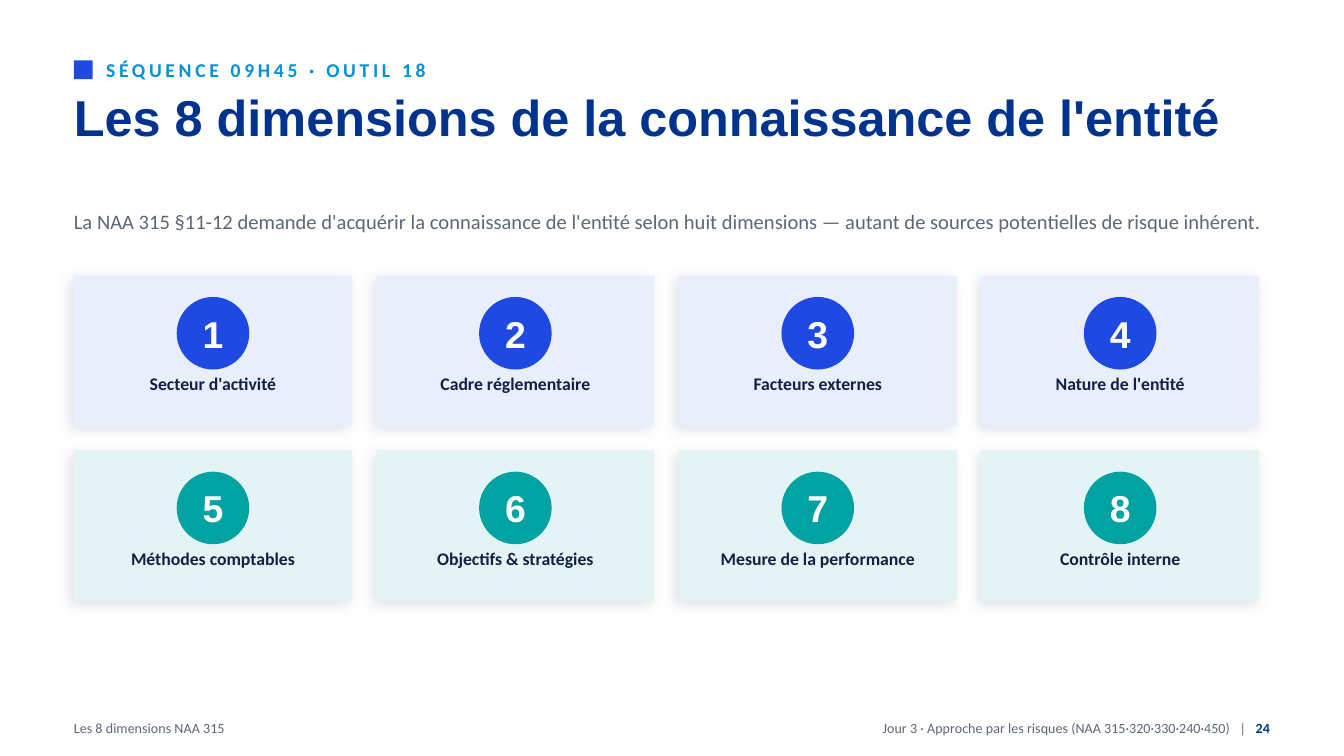
import pptx
import pptx.util
import pptx.dml.color
import pptx.enum.shapes
import pptx.enum.text
import pptx.oxml
import pptx.oxml.ns

Inches = pptx.util.Inches
Pt = pptx.util.Pt
Shape = pptx.enum.shapes.MSO_SHAPE
Align = pptx.enum.text.PP_ALIGN
Anchor = pptx.enum.text.MSO_ANCHOR

TITLE = "Les 8 dimensions de la connaissance de l'entité"
KICKER = "SÉQUENCE 09H45 · OUTIL 18"
INTRO = (
    "La NAA 315 §11-12 demande d'acquérir la connaissance de l'entité selon huit "
    "dimensions — autant de sources potentielles de risque inhérent."
)
ROWS = [
    ("E8EFFB", "1E49E2", ["Secteur d'activité", "Cadre réglementaire",
                          "Facteurs externes", "Nature de l'entité"]),
    ("E4F4F4", "00A3A1", ["Méthodes comptables", "Objectifs & stratégies",
                          "Mesure de la performance", "Contrôle interne"]),
]
FOOTER_LEFT = "Les 8 dimensions NAA 315"
FOOTER_RIGHT = "Jour 3 · Approche par les risques (NAA 315·320·330·240·450)"
PAGE_NUMBER = "24"

NAVY, GREY, BLUE = "00338D", "5C6678", "1E49E2"
PAGE_WIDTH = 10
PAGE_HEIGHT = PAGE_WIDTH * 9 / 16
LEFT, TOP = 0.55, 2.05
CARD_WIDTH, CARD_HEIGHT, GAP = 2.07, 1.12, 0.18
CIRCLE, PADDING = 0.54, 0.08
FOOTER_TOP, FOOTER_HEIGHT = 5.3, 0.24


def color(value):
    return pptx.dml.color.RGBColor.from_string(value)


def style(span, size, hue, bold=False, font="Calibri", spacing=0):
    span.font.size = Pt(size)
    span.font.name = font
    span.font.bold = bold
    span.font.color.rgb = color(hue)
    if spacing:
        span.font._element.set("spc", str(round(spacing * 100)))


def write(box, spans, align=Align.LEFT, anchor=Anchor.MIDDLE, line_spacing=None):
    frame = box.text_frame
    frame.word_wrap = True
    frame.auto_size = pptx.enum.text.MSO_AUTO_SIZE.NONE
    frame.vertical_anchor = anchor
    frame.margin_left = frame.margin_right = 0
    frame.margin_top = frame.margin_bottom = 0
    para = frame.paragraphs[0]
    para.alignment = align
    if line_spacing:
        para.line_spacing = line_spacing
    for text, look in spans:
        span = para.add_run()
        span.text = text
        style(span, **look)


def add_text(page, place, spans, **layout):
    box = page.shapes.add_textbox(*map(Inches, place))
    write(box, spans, **layout)


def add_shape(page, kind, place, fill):
    shape = page.shapes.add_shape(kind, *map(Inches, place))
    shape.shadow.inherit = False
    shape.fill.solid()
    shape.fill.fore_color.rgb = color(fill)
    shape.line.fill.background()
    return shape


def add_shadow(shape):
    effects = shape._element.spPr.find(pptx.oxml.ns.qn("a:effectLst"))
    effects.append(pptx.oxml.parse_xml(
        f'<a:outerShdw {pptx.oxml.ns.nsdecls("a")} blurRad="{Pt(7)}" dist="{Pt(3)}" '
        f'dir="{135 * 60000}" algn="bl" rotWithShape="0">'
        '<a:srgbClr val="5B6B8C"><a:alpha val="18000"/></a:srgbClr></a:outerShdw>'
    ))


def add_card(page, left, top, number, label, fill, accent):
    card = add_shape(page, Shape.RECTANGLE, (left, top, CARD_WIDTH, CARD_HEIGHT), fill)
    add_shadow(card)
    circle_place = (left + (CARD_WIDTH - CIRCLE) / 2, top + 0.16, CIRCLE, CIRCLE)
    add_shape(page, Shape.OVAL, circle_place, accent)
    add_text(page, circle_place,
             [(str(number), dict(size=20, hue="FFFFFF", bold=True, font="Arial"))],
             align=Align.CENTER)
    add_text(page, (left + PADDING, top + 0.74, CARD_WIDTH - 2 * PADDING, 0.36),
             [(label, dict(size=9.5, hue="122046", bold=True))],
             align=Align.CENTER, anchor=Anchor.TOP, line_spacing=0.92)


def main():
    deck = pptx.Presentation()
    deck.slide_width, deck.slide_height = Inches(PAGE_WIDTH), Inches(PAGE_HEIGHT)
    page = deck.slides.add_slide(deck.slide_layouts[5])
    page.background.fill.solid()
    page.background.fill.fore_color.rgb = color("FFFFFF")

    title = page.shapes.title
    title.left, title.top, title.width, title.height = map(Inches, (LEFT, 0.66, 8.9, 0.62))
    write(title, [(TITLE, dict(size=27, hue=NAVY, bold=True, font="Arial"))],
          anchor=Anchor.TOP, line_spacing=0.98)

    add_shape(page, Shape.RECTANGLE, (LEFT, 0.45, 0.14, 0.14), BLUE)
    add_text(page, (0.79, 0.4, 8.66, 0.24),
             [(KICKER, dict(size=10.5, hue="0091DA", bold=True, spacing=2))])
    add_text(page, (LEFT, 1.42, 8.9, 0.45), [(INTRO, dict(size=11, hue=GREY))],
             line_spacing=1.02)

    for row, (fill, accent, labels) in enumerate(ROWS):
        for column, label in enumerate(labels):
            add_card(page, LEFT + column * (CARD_WIDTH + GAP),
                     TOP + row * (CARD_HEIGHT + GAP),
                     row * len(labels) + column + 1, label, fill, accent)

    small = dict(size=7.5, hue=GREY)
    add_text(page, (LEFT, FOOTER_TOP, 5.5, FOOTER_HEIGHT), [(FOOTER_LEFT, small)])
    add_text(page, (4, FOOTER_TOP, 5.45, FOOTER_HEIGHT),
             [(FOOTER_RIGHT, small),
              (" |", dict(small, spacing=3.4)),
              (" " + PAGE_NUMBER, dict(small, hue=NAVY, bold=True))],
             align=Align.RIGHT)

    deck.save("out.pptx")


if __name__ == "__main__":
    main()
